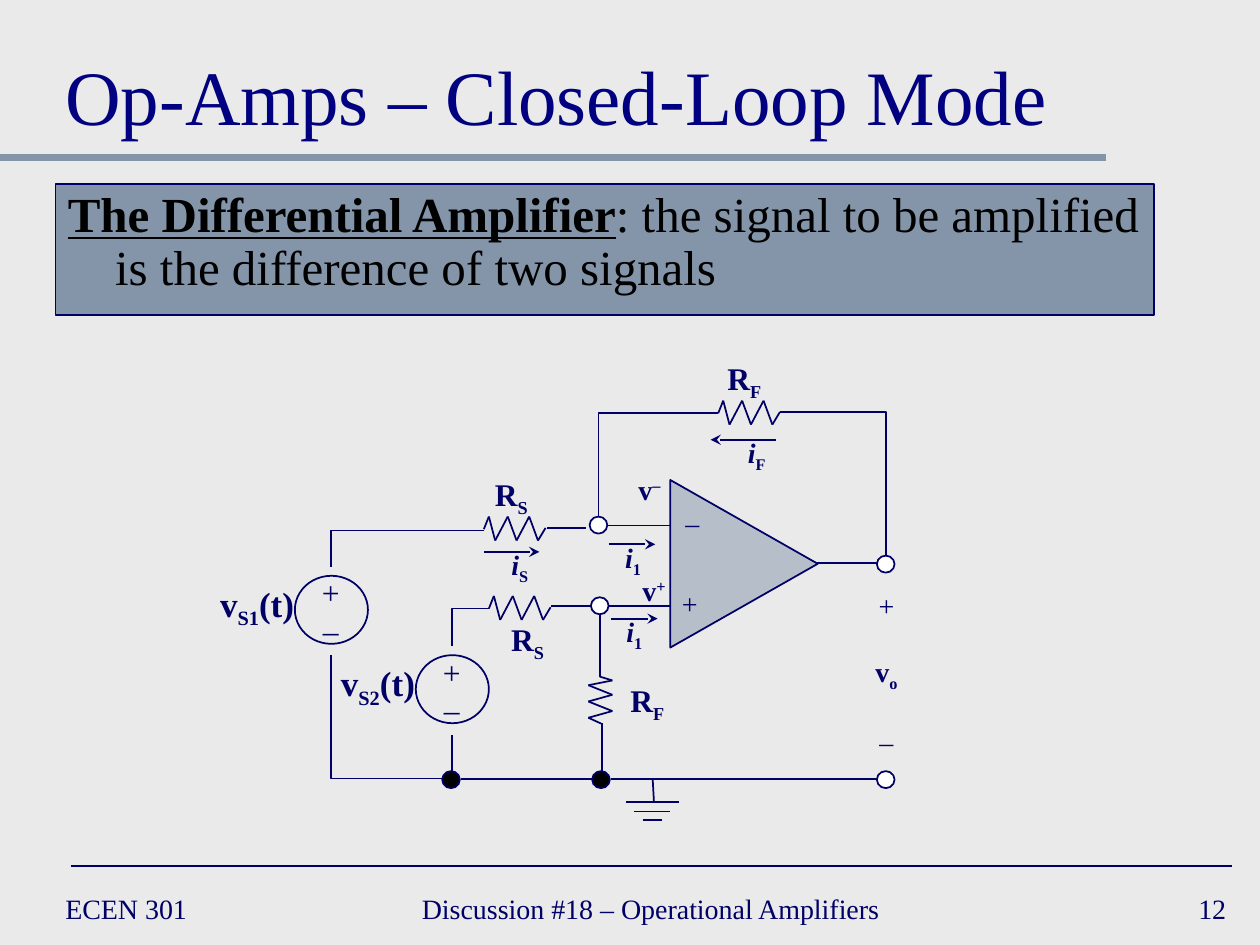
"""Build a slide on the differential amplifier with its closed-loop circuit."""
from itertools import pairwise

from lxml import etree
from pptx import Presentation
from pptx import util as u
from pptx.dml.color import RGBColor
from pptx.enum import shapes, text
from pptx.oxml.ns import qn

NAVY = RGBColor(0x00, 0x00, 0x66)
TITLE_BLUE = RGBColor(0x00, 0x00, 0x80)
SLATE = RGBColor(0x84, 0x95, 0xA9)
PALE = RGBColor(0xEA, 0xEA, 0xEA)
WHITE = RGBColor(0xFF, 0xFF, 0xFF)
BLACK = RGBColor(0x00, 0x00, 0x00)
LEFT, CENTER, RIGHT = (text.PP_ALIGN.LEFT, text.PP_ALIGN.CENTER, text.PP_ALIGN.RIGHT)
TOP, MIDDLE, BOTTOM = (text.MSO_ANCHOR.TOP, text.MSO_ANCHOR.MIDDLE, text.MSO_ANCHOR.BOTTOM)

deck = Presentation()
deck.slide_width, deck.slide_height = u.Inches(10), u.Inches(7.5)
CELL = deck.slide_width // 100
page = deck.slides.add_slide(deck.slide_layouts[6])
page.background.fill.solid()
page.background.fill.fore_color.rgb = PALE


def draw_wire(start, end, color=NAVY, width=1, bent=False, arrow=False):
    kind = shapes.MSO_CONNECTOR.ELBOW if bent else shapes.MSO_CONNECTOR.STRAIGHT
    wire = page.shapes.add_connector(kind, *[int(v * CELL) for v in (*start, *end)])
    wire.line.color.rgb = color
    wire.line.width = u.Pt(width)
    properties = wire._element.spPr
    if bent:
        properties.find(qn("a:prstGeom")).set("prst", "bentConnector2")
    if arrow:
        etree.SubElement(wire.line._get_or_add_ln(), qn("a:tailEnd"), type="stealth")
    etree.SubElement(properties, qn("a:effectLst"))


def write(box, lines, size, color=NAVY, align=CENTER, anchor=TOP, wrap=False, gap=0):
    frame = box.text_frame
    frame.word_wrap = wrap
    frame.vertical_anchor = anchor
    for index, runs in enumerate(lines):
        para = frame.add_paragraph() if index else frame.paragraphs[0]
        para.alignment = align
        if index and gap:
            para.space_before = u.Pt(gap)
        para.font.name, para.font.size = "Times New Roman", u.Pt(size)
        para.font.color.rgb = color
        para.font.bold = all("b" in marks for _, marks in runs)
        for words, marks in runs:
            span = para.add_run()
            span.text = words
            if "b" in marks and not para.font.bold:
                span.font.bold = True
            if "u" in marks:
                span.font.underline = True
            if "i" in marks:
                span.font.italic = True
            if "_" in marks or "^" in marks:
                span._r.get_or_add_rPr().set("baseline", "-25000" if "_" in marks else "30000")


draw_wire((0, 12.5), (87.8, 12.5), SLATE, 4)
draw_wire((5.6, 68.75), (97.8, 68.75))

frames = [
    ((4.2, 1.7, 91.7, 10), "Op-Amps – Closed-Loop Mode", 44, TITLE_BLUE, LEFT, BOTTOM),
    ((4.2, 70, 21.7, 4.2), "ECEN 301", 16, NAVY, LEFT, MIDDLE),
    ((32.5, 70, 38.3, 4.2), "Discussion #18 – Operational Amplifiers", 16, NAVY, LEFT, MIDDLE),
    ((77.5, 70, 20.8, 4.2), "12", 16, NAVY, RIGHT, MIDDLE),
]
for area, words, size, color, align, anchor in frames:
    box = page.shapes.add_textbox(*[int(v * CELL) for v in area])
    write(box, [[(words, "")]], size, color, align, anchor, wrap=True)

body = page.shapes.add_shape(shapes.MSO_SHAPE.RECTANGLE, *[int(v * CELL) for v in (4.4, 14.6, 87.2, 10.4)])
amplifier = page.shapes.add_shape(
    shapes.MSO_SHAPE.ISOSCELES_TRIANGLE, *[int(v * CELL) for v in (52.4, 38.9, 13.3, 11.7)])
amplifier.rotation = 90
for shape, width in ((body, 0.75), (amplifier, 1)):
    shape.shadow.inherit = False
    shape.fill.solid()
    shape.fill.fore_color.rgb = SLATE
    shape.line.color.rgb = NAVY
    shape.line.width = u.Pt(width)
tint = amplifier._element.spPr.find(qn("a:solidFill")).find(qn("a:srgbClr"))
etree.SubElement(tint, qn("a:alpha"), val="50000")

hanging = body.text_frame.paragraphs[0]._p.get_or_add_pPr()
hanging.set("marL", str(int(3.75 * CELL)))
hanging.set("indent", str(int(-3.75 * CELL)))
write(body, [[("The Differential Amplifier", "bu"),
              (": the signal to be amplified is the difference of two signals", "")]],
      28, BLACK, LEFT, wrap=True)
body.text_frame.paragraphs[0].line_spacing = 0.9

ZIGZAG = [(0, 0), (0.4, -1), (0.9, 0.9), (1.9, -1), (2.6, 0.9), (3.6, -1), (4.3, 0.9), (4.9, -0.1)]
resistors = [[(x + dx, y + dy) for dx, dy in ZIGZAG] for x, y in ((57, 32.8), (38.8, 48.3), (38.4, 42))]
resistors.append([(47.6 - dy, 53.7 + 0.76 * dx) for dx, dy in ZIGZAG])
for resistor in resistors:
    for start, end in pairwise(resistor):
        draw_wire(start, end)

wires = [
    ((53.2, 48.1), (48.2, 48.1)), ((53.2, 41.7), (48.2, 41.7)), ((69.8, 44.7), (64.8, 44.7)),
    ((46.9, 48.1), (43.7, 48.1)), ((46.5, 41.9), (43.4, 41.9)), ((35.9, 61.2), (35.9, 58.3)),
    ((47.6, 53.7), (47.6, 48.7)), ((47.8, 57.4), (47.8, 61.2)), ((47, 61.8), (36.6, 61.8)),
    ((48.5, 61.8), (69.6, 61.8)), ((51.9, 63.6), (51.8, 61.8)), ((49.7, 63.65), (53.9, 63.65)),
    ((50.3, 64.4), (53.2, 64.4)), ((51, 65.1), (52.5, 65.1)),
]
for start, end in wires:
    draw_wire(start, end)

corners = [
    ((57, 32.8), (47.5, 41.1)), ((61.9, 32.7), (70.3, 44.1)), ((38.8, 48.3), (35.9, 51.3)),
    ((38.4, 42.1), (26.3, 45)), ((35.1, 61.8), (26.3, 52)),
]
for start, end in corners:
    draw_wire(start, end, bent=True)

currents = [
    ((48.3, 43.2), (52, 43.2)), ((48.5, 49.1), (52.2, 49.1)),
    ((38.4, 43.8), (42.8, 43.8)), ((61.6, 34.9), (56.4, 34.9)),
]
for start, end in currents:
    draw_wire(start, end, arrow=True)

terminals = [
    (46.9, 47.4, WHITE), (46.8, 41, WHITE), (69.6, 44.1, WHITE), (69.6, 61.2, WHITE),
    (35.1, 61.2, BLACK), (47, 61.2, BLACK),
]
sources = [(23.4, 45.7), (33, 52)]
circles = [(x, y, 1.4, 1.35, color) for x, y, color in terminals]
circles += [(x, y, 5.8, 5.4, None) for x, y in sources]
for *area, color in circles:
    circle = page.shapes.add_shape(shapes.MSO_SHAPE.OVAL, *[int(v * CELL) for v in area])
    circle.shadow.inherit = False
    circle.line.color.rgb = NAVY
    circle.line.width = u.Pt(1)
    if color is None:
        circle.fill.background()
    else:
        circle.fill.solid()
        circle.fill.fore_color.rgb = color

labels = [
    ((53.4, 39.6, 3.1, 3.7), [[("–", "")]], 16, 0),
    ((53.1, 46.1, 3.3, 3.7), [[("+", "")]], 16, 0),
    ((68.4, 46.2, 3.9, 14.4), [[("+", "")], [("v", "b"), ("o", "b_")], [("–", "")]], 16, 18.4),
    ((49.9, 45, 4, 3.7), [[("v", "b"), ("+", "b^")]], 16, 0),
    ((49.6, 37, 3.9, 3.7), [[("v", "b"), ("–", "b^")]], 16, 0),
]
for x, y, mark in ((48.5, 42.4, "1"), (48.6, 48.3, "1"), (58.3, 34.1, "F"), (39.5, 43, "S")):
    labels.append(((x, y, 3.5, 3.7), [[("i", "bi"), (mark, "b_")]], 16, 0))
for x, y, mark in ((56.7, 28, "F"), (49, 53.6, "F"), (38.2, 37.2, "S"), (39.5, 48.7, "S")):
    labels.append(((x, y, 4.75, 4), [[("R", "b"), (mark, "b_")]], 18, 0))
for number, (x, y) in enumerate(sources, 1):
    labels.append(((x - 7.05, y, 8.1, 4.3), [[("v", "b"), (f"S{number}", "b_"), ("(t)", "b")]], 20, 0))
    labels.append(((x + 1.15, y - 0.7, 3.4, 7), [[("+", "")], [("–", "")]], 18, 0))
for area, lines, size, gap in labels:
    label = page.shapes.add_textbox(*[int(v * CELL) for v in area])
    write(label, lines, size, gap=gap)
    label.text_frame.auto_size = text.MSO_AUTO_SIZE.SHAPE_TO_FIT_TEXT

deck.save("out.pptx")
